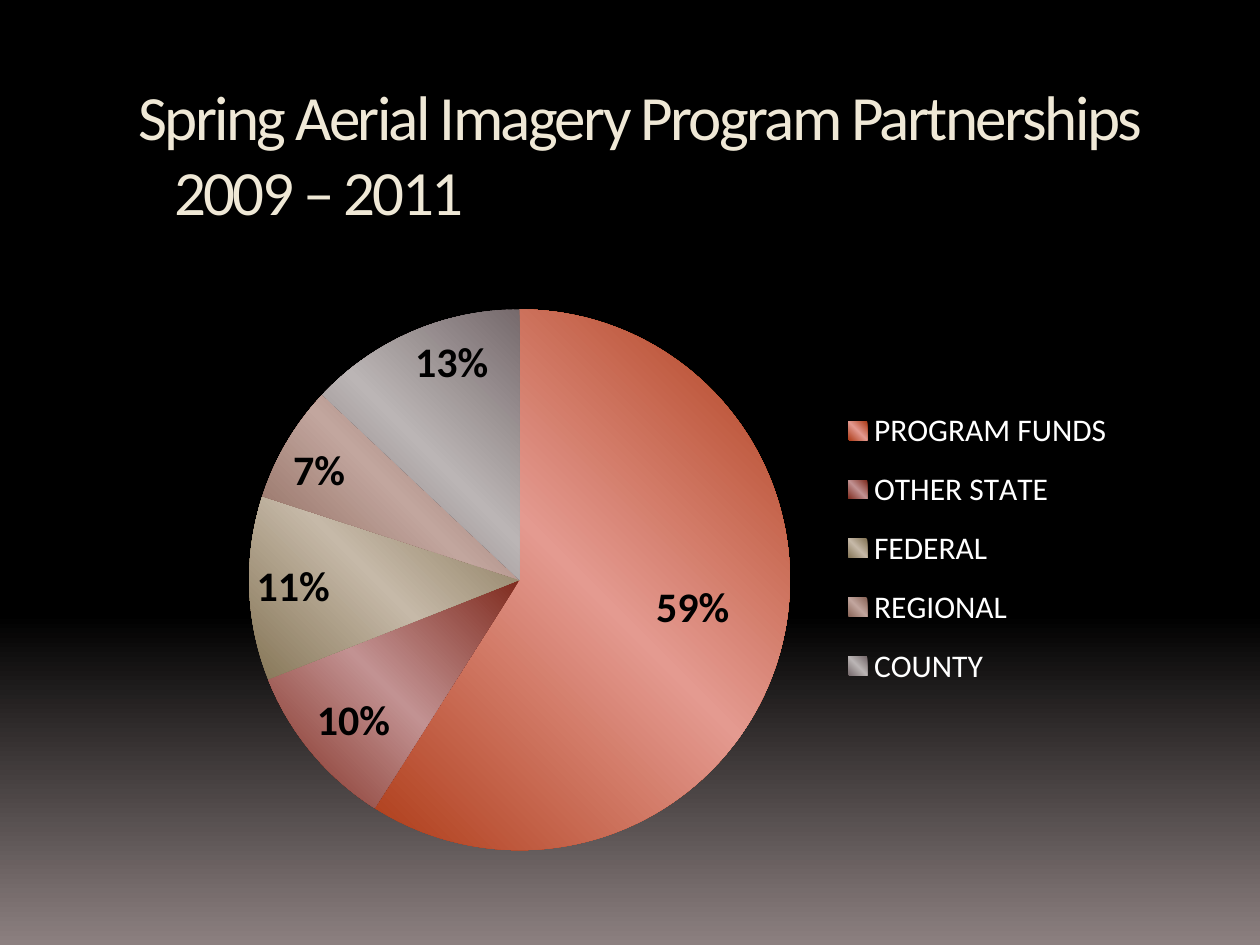
"""Build a slide with a pie chart of the imagery program partnerships."""
from copy import deepcopy

from pptx import Presentation
from pptx.chart.data import CategoryChartData as ChartData
from pptx.dml.color import RGBColor as Color
from pptx.enum.chart import XL_CHART_TYPE as ChartType
from pptx.enum.chart import XL_LABEL_POSITION as LabelPosition
from pptx.enum.chart import XL_LEGEND_POSITION as LegendPosition
from pptx.enum.text import MSO_ANCHOR as Anchor
from pptx.oxml import parse_xml
from pptx.oxml.ns import nsdecls, qn
from pptx.util import Emu, Pt

PX = 914400 / 126
COLORS = {"title": "EFE8D6", "legend": "FFFFFF", "label": "000000",
          "black": "000000", "floor": "8C8080"}
SLICES = [
    ("PROGRAM FUNDS", 59, "AE3C18", "E49A90"),
    ("OTHER STATE", 10, "7F2B1E", "C29292"),
    ("FEDERAL", 11, "857556", "C6B9A8"),
    ("REGIONAL", 7, "8A6558", "C2A69E"),
    ("COUNTY", 13, "766A6C", "BBB5B5"),
]


def paint_gradient(fill, root, angle, stops):
    fill.gradient()
    fill.gradient_angle = angle
    stop_list = list(root.iter(qn("a:gsLst")))[-1]
    for stop in list(stop_list):
        stop_list.remove(stop)
    for percent, color in stops:
        stop_list.append(parse_xml(
            f'<a:gs {nsdecls("a")} pos="{percent * 1000}"><a:srgbClr val="{color}"/></a:gs>'))


def make_layout(target="", modes=("edge", "edge"), **places):
    inner = f'<c:layoutTarget val="{target}"/>' if target else ""
    if modes:
        inner += "".join(f'<c:{axis}Mode val="{mode}"/>' for axis, mode in zip("xy", modes))
    inner += "".join(f'<c:{name} val="{value}"/>' for name, value in places.items())
    return parse_xml(
        f'<c:layout {nsdecls("c")}><c:manualLayout>{inner}</c:manualLayout></c:layout>')


deck = Presentation()
deck.slide_width, deck.slide_height = Emu(round(1260 * PX)), Emu(round(945 * PX))
page = deck.slides.add_slide(deck.slide_layouts[6])
paint_gradient(page.background.fill, page.element, 270,
               [(0, COLORS["black"]), (65, COLORS["black"]), (100, COLORS["floor"])])

box = page.shapes.add_textbox(*(Emu(round(n * PX)) for n in (126, 71, 1071, 126)))
frame = box.text_frame
frame.word_wrap = True
frame.vertical_anchor = Anchor.TOP
para = frame.paragraphs[0]
margins = para._p.get_or_add_pPr()
margins.set("marL", str(round(36 * PX)))
margins.set("indent", str(round(-36 * PX)))
span = para.add_run()
span.text = "Spring Aerial Imagery Program Partnerships 2009 – 2011"
span.font._element.set("spc", "-150")

data = ChartData()
data.categories = [name for name, *_ in SLICES]
data.add_series("Series 1", [value for _, value, *_ in SLICES])
chart = page.shapes.add_chart(
    ChartType.PIE, *(Emu(round(n * PX)) for n in (126, 246, 1071, 630)), data).chart
chart.has_title = False
chart.has_legend = True
legend = chart.legend
legend.position = LegendPosition.RIGHT
legend.include_in_layout = False

plot = chart.plots[0]
plot.vary_by_categories = True
plot.has_data_labels = True
labels = plot.data_labels
FORMATS = [
    (span.font, {"size": Pt(36), "name": "Calibri"}, "title"),
    (chart.font, {"size": Pt(18), "name": "Calibri"}, "legend"),
    (legend.font, {"size": Pt(18), "name": "Calibri"}, "legend"),
    (labels.font, {"size": Pt(24), "name": "Calibri", "bold": True}, "label"),
]
for font, values, color in FORMATS:
    for name, value in values.items():
        setattr(font, name, value)
    font.color.rgb = Color.from_string(COLORS[color])

LABELS = {"show_percentage": True, "show_value": False, "number_format": "0%",
          "number_format_is_linked": False, "position": LabelPosition.INSIDE_END}
for name, value in LABELS.items():
    setattr(labels, name, value)

series = plot.series[0]
for index, (_, _, dark, light) in enumerate(SLICES):
    shade = series.points[index].format
    paint_gradient(shade.fill, series._element, 45, [(0, dark), (50, light), (100, dark)])
    shade.line.fill.background()

plot_labels = labels._element
series_labels = deepcopy(plot_labels)
series._element.find(qn("c:cat")).addprevious(series_labels)
first_label = parse_xml(f'<c:dLbl {nsdecls("c")}><c:idx val="0"/></c:dLbl>')
first_label.append(make_layout(modes=(), x=-0.04, y=-0.03))
for part in series_labels:
    if part.tag != qn("c:showLeaderLines"):
        first_label.append(deepcopy(part))
series_labels.insert(0, first_label)

plot_area = chart._chartSpace.chart.plotArea
for old in plot_area.findall(qn("c:layout")):
    plot_area.remove(old)
plot_area.insert(0, make_layout("inner", x=0.115, y=0.1, w=0.505, h=0.86))
for old in legend._element.findall(qn("c:layout")):
    legend._element.remove(old)
legend._element.find(qn("c:legendPos")).addnext(
    make_layout(x=0.66, y=0.23, w=0.27, h=0.5))

deck.save("out.pptx")
